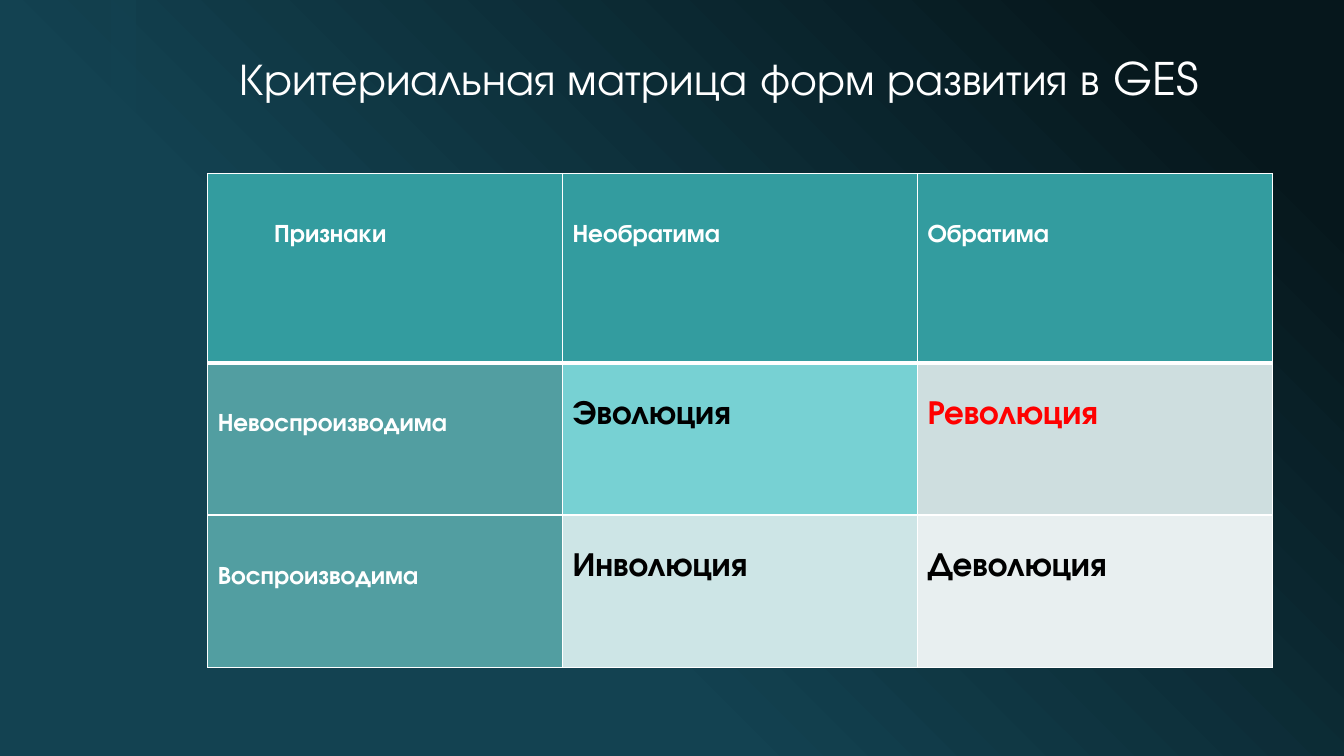
import pptx
import pptx.dml.color
import pptx.enum.dml
import pptx.enum.shapes
import pptx.enum.text
import pptx.oxml
import pptx.oxml.ns
import pptx.util
from lxml import etree

Inches = pptx.util.Inches
Pt = pptx.util.Pt
RGBColor = pptx.dml.color.RGBColor

WHITE = RGBColor(0xFF, 0xFF, 0xFF)
BLACK = RGBColor(0, 0, 0)
RED = RGBColor(0xFF, 0, 0)
NIGHT = RGBColor(0x06, 0x17, 0x1C)
DEEP_TEAL = RGBColor(0x13, 0x42, 0x51)
HEADER_TEAL = RGBColor(0x33, 0x9C, 0x9F)
SIDE_TEAL = RGBColor(0x52, 0x9E, 0xA1)
AQUA = RGBColor(0x77, 0xD1, 0xD3)
GREY_TEAL = RGBColor(0xCE, 0xDE, 0xDF)
PALE_TEAL = RGBColor(0xCD, 0xE5, 0xE6)
PALE_GREY = RGBColor(0xE8, 0xEF, 0xF0)

FONT = "TeX Gyre Adventor"
TITLE = "Критериальная матрица форм развития в GES"
MATRIX = [
    [("Признаки", WHITE, HEADER_TEAL), ("Необратима", WHITE, HEADER_TEAL),
     ("Обратима", WHITE, HEADER_TEAL)],
    [("Невоспроизводима", WHITE, SIDE_TEAL), ("Эволюция", BLACK, AQUA),
     ("Революция", RED, GREY_TEAL)],
    [("Воспроизводима", WHITE, SIDE_TEAL), ("Инволюция", BLACK, PALE_TEAL),
     ("Деволюция", BLACK, PALE_GREY)],
]
ROW_HEIGHTS = [1.88, 1.51, 1.51]
COLUMN_WIDTH = 3.52
LABEL_STYLE = (18, 0.5)
FORM_STYLE = (24, 0.36)


def add_run(paragraph, text, size, color, bold=False):
    run = paragraph.add_run()
    run.text = text
    run.font.name = FONT
    run.font.size = Pt(size)
    run.font.bold = bold
    run.font.color.rgb = color


def add_border(cell, side, width):
    properties = cell._tc.get_or_add_tcPr()
    line = etree.SubElement(properties, pptx.oxml.ns.qn(f"a:ln{side}"), w=str(Pt(width)))
    fill = etree.SubElement(line, pptx.oxml.ns.qn("a:solidFill"))
    etree.SubElement(fill, pptx.oxml.ns.qn("a:srgbClr"), val=str(WHITE))


def paint_background(slide):
    fill = slide.background.fill
    fill.gradient()
    fill.gradient_angle = 225
    for stop, (position, color) in zip(fill.gradient_stops, [(0.1, NIGHT), (0.65, DEEP_TEAL)]):
        stop.position = position
        stop.color.rgb = color


def add_side_band(slide):
    band = slide.shapes.add_shape(pptx.enum.shapes.MSO_SHAPE.RECTANGLE,
                                  Inches(1.1), 0, Inches(0.25), Inches(7.5))
    band.shadow.inherit = False
    band.line.fill.background()
    band.fill.solid()
    band.fill.fore_color.rgb = DEEP_TEAL
    color = band._element.spPr.find(".//" + pptx.oxml.ns.qn("a:srgbClr"))
    etree.SubElement(color, pptx.oxml.ns.qn("a:alpha"), val="60000")


def add_title(slide):
    box = slide.shapes.add_textbox(Inches(1.39), Inches(0.31), Inches(11.73), Inches(0.78))
    frame = box.text_frame
    frame.word_wrap = True
    frame.margin_right = Inches(0.34)
    frame.vertical_anchor = pptx.enum.text.MSO_ANCHOR.BOTTOM
    paragraph = frame.paragraphs[0]
    paragraph.alignment = pptx.enum.text.PP_ALIGN.CENTER
    paragraph.line_spacing = 0.9
    add_run(paragraph, TITLE, 32, WHITE)


def add_matrix(slide):
    columns = len(MATRIX[0])
    table = slide.shapes.add_table(len(MATRIX), columns, Inches(2.06), Inches(1.72),
                                   Inches(COLUMN_WIDTH * columns),
                                   Inches(sum(ROW_HEIGHTS))).table
    for column in table.columns:
        column.width = Inches(COLUMN_WIDTH)
    for row_index, entries in enumerate(MATRIX):
        table.rows[row_index].height = Inches(ROW_HEIGHTS[row_index])
        for column_index, (text, color, background) in enumerate(entries):
            cell = table.cell(row_index, column_index)
            is_label = row_index == 0 or column_index == 0
            size, top = LABEL_STYLE if is_label else FORM_STYLE
            cell.margin_top = Inches(top)
            if row_index == column_index == 0:
                cell.margin_left = Inches(0.66)
            add_run(cell.text_frame.paragraphs[0], text, size, color, bold=True)
            add_border(cell, "L", 1)
            add_border(cell, "R", 1)
            add_border(cell, "T", 3 if row_index == 1 else 1)
            add_border(cell, "B", 3 if row_index == 0 else 1)
            cell.fill.solid()
            cell.fill.fore_color.rgb = background


def main():
    presentation = pptx.Presentation()
    presentation.slide_width = Inches(13.33)
    presentation.slide_height = Inches(7.5)
    slide = presentation.slides.add_slide(presentation.slide_layouts[6])
    paint_background(slide)
    add_side_band(slide)
    add_title(slide)
    add_matrix(slide)
    presentation.save("out.pptx")


if __name__ == "__main__":
    main()
